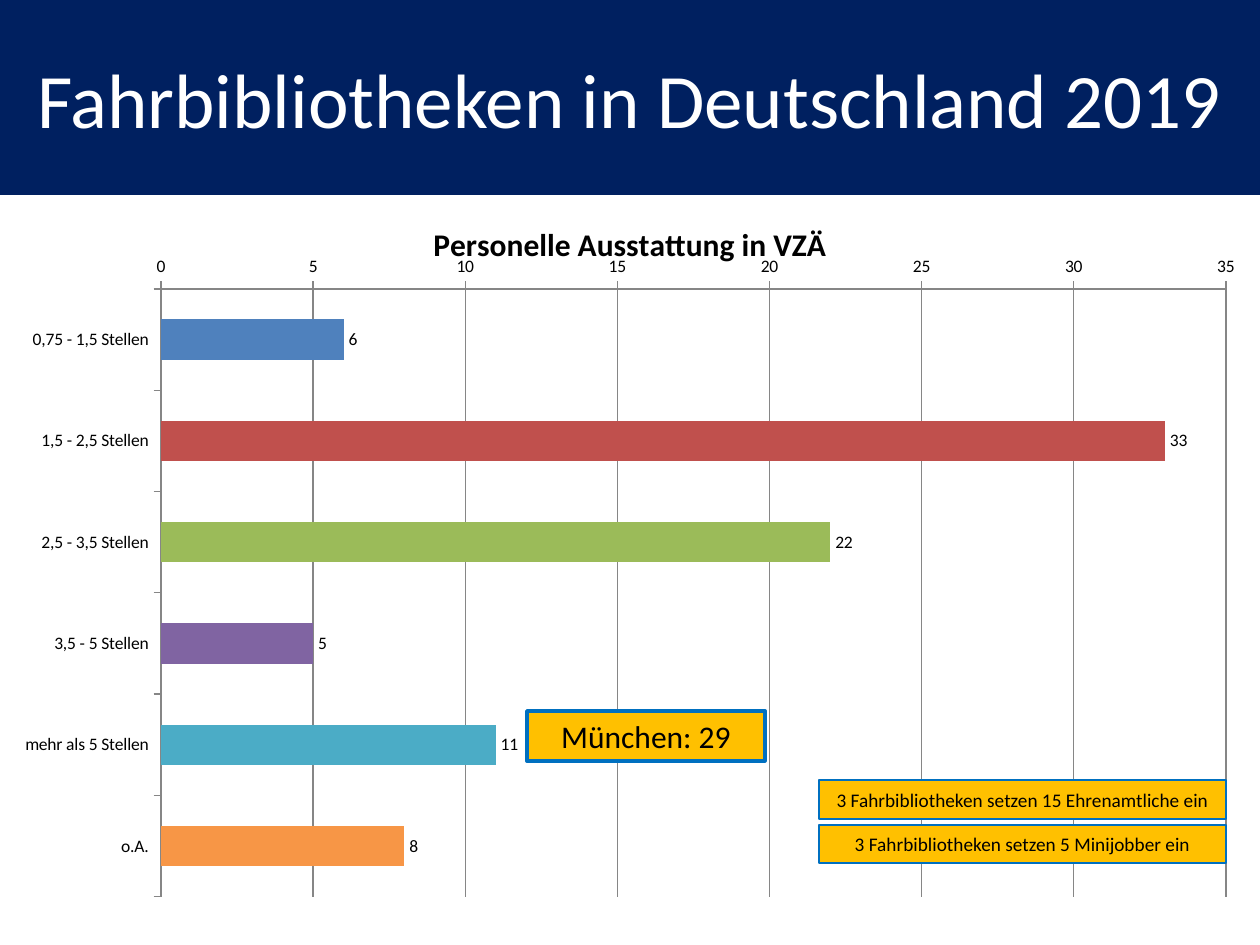
from dataclasses import dataclass

from lxml import etree
from pptx import Presentation
from pptx import util as u
from pptx.chart.data import CategoryChartData
from pptx.dml.color import RGBColor
from pptx.enum import chart as ch
from pptx.enum import shapes, text
from pptx.oxml import parse_xml
from pptx.oxml.ns import nsdecls

PX_PER_INCH = 126
PAGE_W, PAGE_H, BANNER_H = 1260, 945, 195
FONT = "Calibri"

NAVY = RGBColor(0x00, 0x20, 0x60)
AMBER = RGBColor(0xFF, 0xC0, 0x00)
BLUE = RGBColor(0x00, 0x70, 0xC0)
GREY = RGBColor(0x86, 0x86, 0x86)
WHITE = RGBColor(0xFF, 0xFF, 0xFF)
BLACK = RGBColor(0x00, 0x00, 0x00)


@dataclass(frozen=True)
class Bar:
    label: str
    count: int
    color: RGBColor


@dataclass(frozen=True)
class Note:
    words: str
    left: int
    top: int
    width: int
    height: int
    size: int
    line: float


BARS = [
    Bar("0,75 - 1,5 Stellen", 6, RGBColor(0x4F, 0x81, 0xBD)),
    Bar("1,5 - 2,5 Stellen", 33, RGBColor(0xC0, 0x50, 0x4D)),
    Bar("2,5 - 3,5 Stellen", 22, RGBColor(0x9B, 0xBB, 0x59)),
    Bar("3,5 - 5 Stellen", 5, RGBColor(0x80, 0x64, 0xA2)),
    Bar("mehr als 5 Stellen", 11, RGBColor(0x4B, 0xAC, 0xC6)),
    Bar("o.A.", 8, RGBColor(0xF7, 0x96, 0x46)),
]
NOTES = [
    Note("München: 29", 527, 711, 238, 50, 18, 2),
    Note("3 Fahrbibliotheken setzen 15 Ehrenamtliche ein", 819, 780, 407, 39, 11, 0.75),
    Note("3 Fahrbibliotheken setzen 5 Minijobber ein", 819, 825, 407, 38, 11, 0.75),
]


def px(length: int) -> u.Emu:
    return u.Emu(round(length * u.Inches(1) / PX_PER_INCH))


def set_font(font, size: int, color: RGBColor, bold: bool = False) -> None:
    values = {"name": FONT, "size": u.Pt(size), "bold": bold}
    for name, value in values.items():
        setattr(font, name, value)
    font.color.rgb = color


def write(shape, words: str, size: int, color: RGBColor) -> None:
    frame = shape.text_frame
    values = {
        "text": words,
        "word_wrap": True,
        "auto_size": text.MSO_AUTO_SIZE.NONE,
        "vertical_anchor": text.MSO_ANCHOR.MIDDLE,
    }
    for name, value in values.items():
        setattr(frame, name, value)
    para = frame.paragraphs[0]
    para.alignment = text.PP_ALIGN.CENTER
    set_font(para.runs[0].font, size, color)


def add_banner(page) -> None:
    title = page.shapes.title
    frame = {"left": 0, "top": 0, "width": PAGE_W, "height": BANNER_H}
    for name, value in frame.items():
        setattr(title, name, px(value))
    title.fill.solid()
    title.fill.fore_color.rgb = NAVY
    write(title, "Fahrbibliotheken in Deutschland 2019", 44, WHITE)


def place_plot(chart, left: int, top: int, width: int, height: int) -> None:
    """Fix the inner plot area, in px from the chart's corner."""
    plot_area = chart.plots[0]._element.getparent()
    for old in plot_area.findall("{*}layout"):
        plot_area.remove(old)
    layout = parse_xml(f"<c:layout {nsdecls('c')}><c:manualLayout/></c:layout>")
    settings = {
        "layoutTarget": "inner",
        "xMode": "edge",
        "yMode": "edge",
        "x": round(left / PAGE_W, 4),
        "y": round(top / (PAGE_H - BANNER_H), 4),
        "w": round(width / PAGE_W, 4),
        "h": round(height / (PAGE_H - BANNER_H), 4),
    }
    namespace = etree.QName(layout).namespace
    for name, value in settings.items():
        etree.SubElement(layout[0], f"{{{namespace}}}{name}").set("val", str(value))
    plot_area.insert(0, layout)


def add_staff_chart(page) -> None:
    data = CategoryChartData()
    data.categories = [bar.label for bar in BARS]
    data.add_series("Stellen", [bar.count for bar in BARS])
    chart = page.shapes.add_chart(
        ch.XL_CHART_TYPE.BAR_CLUSTERED,
        px(0), px(BANNER_H), px(PAGE_W), px(PAGE_H - BANNER_H), data,
    ).chart
    set_font(chart.font, 10, BLACK)
    chart.has_legend = False
    chart.has_title = True
    chart.chart_title.include_in_layout = False
    heading = chart.chart_title.text_frame
    heading.text = "Personelle Ausstattung in VZÄ"
    set_font(heading.paragraphs[0].runs[0].font, 18, BLACK, bold=True)

    plot = chart.plots[0]
    plot.gap_width = 150
    plot.vary_by_categories = False
    plot.has_data_labels = True
    plot.data_labels.show_value = True
    plot.data_labels.position = ch.XL_LABEL_POSITION.OUTSIDE_END
    set_font(plot.data_labels.font, 10, BLACK)
    for index, bar in enumerate(BARS):
        fill = plot.series[0].points[index].format.fill
        fill.solid()
        fill.fore_color.rgb = bar.color

    categories, values = chart.category_axis, chart.value_axis
    categories.reverse_order = True
    categories.crosses = ch.XL_AXIS_CROSSES.MAXIMUM
    values.minimum_scale, values.maximum_scale, values.major_unit = 0, 35, 5
    values.has_major_gridlines = True
    for axis in (categories, values):
        axis.major_tick_mark = ch.XL_TICK_MARK.OUTSIDE
        axis.format.line.color.rgb = GREY
        set_font(axis.tick_labels.font, 10, BLACK)
    values.major_gridlines.format.line.color.rgb = GREY
    place_plot(chart, 161, 94, 1065, 608)


def add_note(page, note: Note) -> None:
    box = page.shapes.add_shape(
        shapes.MSO_SHAPE.RECTANGLE,
        px(note.left), px(note.top), px(note.width), px(note.height),
    )
    box.shadow.inherit = False
    box.fill.solid()
    box.fill.fore_color.rgb = AMBER
    box.line.color.rgb = BLUE
    box.line.width = u.Pt(note.line)
    write(box, note.words, note.size, BLACK)


def main() -> None:
    deck = Presentation()
    deck.slide_width, deck.slide_height = px(PAGE_W), px(PAGE_H)
    page = deck.slides.add_slide(deck.slide_layouts.get_by_name("Title Only"))
    add_banner(page)
    add_staff_chart(page)
    for note in NOTES:
        add_note(page, note)
    deck.save("out.pptx")


if __name__ == "__main__":
    main()
